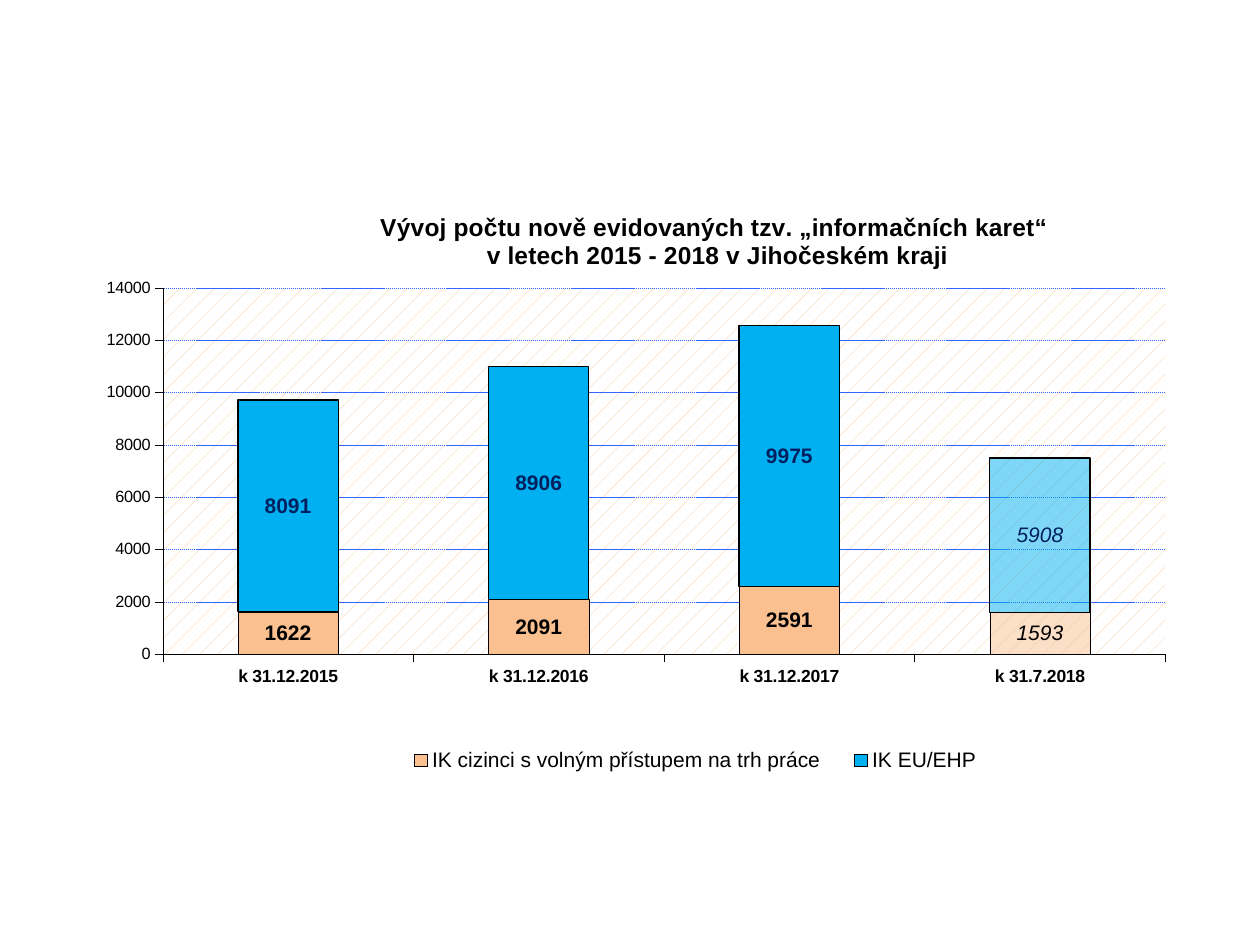
from lxml import etree
from pptx import Presentation
from pptx.chart.data import CategoryChartData
from pptx.dml.color import RGBColor
from pptx.enum import chart as ch, dml
from pptx.oxml import parse_xml
from pptx.oxml.ns import nsdecls, qn
from pptx.util import Pt

DATES = ["k 31.12.2015", "k 31.12.2016", "k 31.12.2017", "k 31.7.2018"]
# name, values, fill, outline width, label colour
SERIES = [
    ("IK cizinci s volným přístupem na trh práce",
     (1622, 2091, 2591, 1593), "FAC090", 0.25, "000000"),
    ("IK EU/EHP", (8091, 8906, 9975, 5908), "00B0F0", 0.75, "002060"),
]
TITLE = ["Vývoj počtu nově evidovaných tzv. „informačních karet“ ",
         "v letech 2015 - 2018 v Jihočeském kraji"]


def color(code):
    return RGBColor.from_string(code)


def set_font(font, size, code="000000", bold=False, italic=False, name="Arial"):
    font.name, font.size = name, Pt(size)
    font.bold, font.italic = bold, italic
    font.color.rgb = color(code)


def set_line(line, code, width):
    line.color.rgb = color(code)
    line.width = Pt(width)


def set_place(item, after, target=None, **sides):
    """Give a chart part a manual layout, as fractions of the chart."""
    for old in item.findall(qn("c:layout")):
        item.remove(old)
    rules = [("layoutTarget", target)] if target else []
    rules += [("xMode", "edge"), ("yMode", "edge"), *sides.items()]
    body = "".join(f'<c:{tag} val="{val}"/>' for tag, val in rules)
    layout = parse_xml(f'<c:layout {nsdecls("c")}><c:manualLayout>{body}'
                       '</c:manualLayout></c:layout>')
    spot = item.index(item.find(qn(after))) + 1 if after else 0
    item.insert(spot, layout)


def add_title(chart):
    chart.has_title = True
    title = chart.chart_title
    title.include_in_layout = False
    frame = title.text_frame
    for num, words in enumerate(TITLE):
        para = frame.add_paragraph() if num else frame.paragraphs[0]
        run = para.add_run()
        run.text = words
        set_font(run.font, 14, bold=True)
    set_place(title._element, "c:tx", x=0.27, y=0.02)


def add_legend(chart):
    chart.has_legend = True
    legend = chart.legend
    legend.position = ch.XL_LEGEND_POSITION.BOTTOM
    legend.include_in_layout = False
    set_font(legend.font, 12)
    set_place(legend._element, "c:legendPos", x=0.28, y=0.86, w=0.55, h=0.06)


def style_axis(axis, size, bold):
    axis.major_tick_mark = ch.XL_TICK_MARK.OUTSIDE
    axis.minor_tick_mark = ch.XL_TICK_MARK.NONE
    set_font(axis.tick_labels.font, size, bold=bold)
    set_line(axis.format.line, "000000", 0.29)


def style_scale(axis):
    axis.minimum_scale, axis.maximum_scale, axis.major_unit = 0, 14000, 2000
    axis.tick_labels.number_format = "0"
    axis.tick_labels.number_format_is_linked = False
    axis.has_major_gridlines = True
    grid = axis.major_gridlines.format.line
    set_line(grid, "3366FF", 0.29)
    grid.dash_style = dml.MSO_LINE.SQUARE_DOT


def style_bars(bars, fill, width, ink):
    """Colour a series; its last, part-year bar is half transparent."""
    last = bars.points[len(DATES) - 1]
    for part in (bars, last):
        part.format.fill.solid()
        part.format.fill.fore_color.rgb = color(fill)
        set_line(part.format.line, "000000", width)
    shade = bars._element.find("/".join(
        qn(tag) for tag in ("c:dPt", "c:spPr", "a:solidFill", "a:srgbClr")))
    etree.SubElement(shade, qn("a:alpha"), val="50000")
    labels = bars.data_labels
    labels.show_value = True
    labels.number_format, labels.number_format_is_linked = "0", False
    set_font(labels.font, 12, ink, bold=True)
    set_font(last.data_label.font, 12, ink, italic=True)


def style_area(chart):
    area = chart._chartSpace.chart.plotArea
    area.append(parse_xml(
        f'<c:spPr {nsdecls("c", "a")}><a:pattFill prst="pct5">'
        '<a:fgClr><a:srgbClr val="FAC090"/></a:fgClr>'
        '<a:bgClr><a:srgbClr val="FFFFFF"/></a:bgClr>'
        '</a:pattFill><a:ln><a:noFill/></a:ln></c:spPr>'))
    set_place(area, None, "inner", x=0.079, y=0.146, w=0.896, h=0.577)


def add_bars(slide):
    data = CategoryChartData(number_format="0")
    data.categories = DATES
    for name, vals, *_ in SERIES:
        data.add_series(name, vals)
    chart = slide.shapes.add_chart(
        ch.XL_CHART_TYPE.COLUMN_STACKED, Pt(42.5), Pt(111.6),
        Pt(639.4), Pt(362.9), data).chart
    set_font(chart.font, 4.7, name="Cambria")
    plot = chart.plots[0]
    plot.gap_width, plot.overlap = 150, 100
    plot.vary_by_categories = False
    for bars, (_, _, *look) in zip(plot.series, SERIES):
        style_bars(bars, *look)
    style_axis(chart.category_axis, 10, True)
    style_axis(chart.value_axis, 9.3, False)
    style_scale(chart.value_axis)
    style_area(chart)
    add_title(chart)
    add_legend(chart)


def main():
    deck = Presentation()
    deck.slide_width, deck.slide_height = Pt(720), Pt(540)
    add_bars(deck.slides.add_slide(deck.slide_layouts[6]))
    deck.save("out.pptx")


if __name__ == "__main__":
    main()
